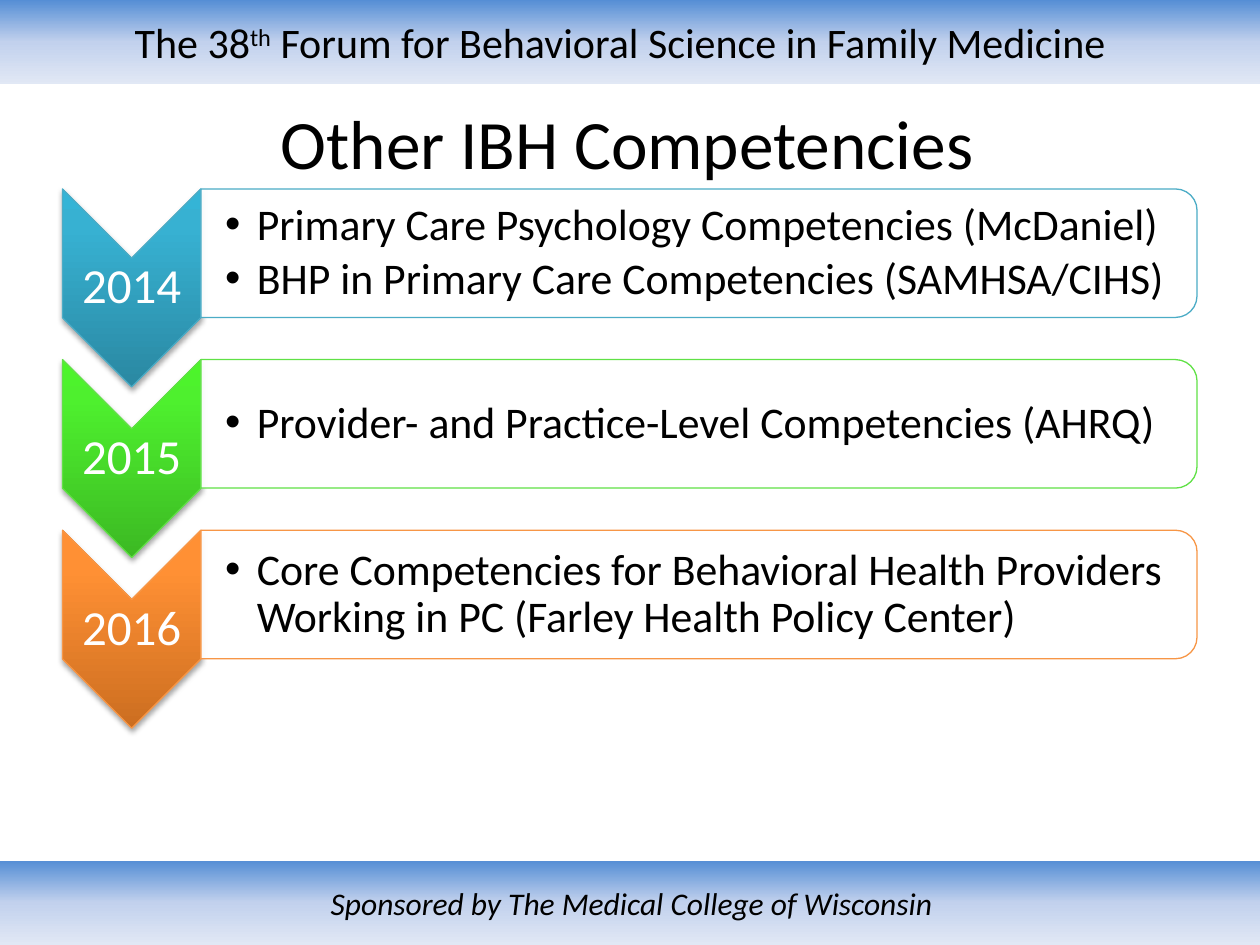
from lxml import etree
from pptx import Presentation
from pptx.dml.color import RGBColor
from pptx.enum.shapes import MSO_SHAPE as Shape
from pptx.enum.text import MSO_ANCHOR as Anchor, PP_ALIGN as Align
from pptx.oxml.ns import qn
from pptx.util import Cm, Pt

rgb = RGBColor.from_string


def shade(shape, stops, angle):
    """Fill with (percent, hex) stops; the clockwise angle ignores shape rotation."""
    shape.fill.gradient()
    grad = shape._element.spPr.find(qn("a:gradFill"))
    grad.set("rotWithShape", "0")
    grad.find(qn("a:lin")).set("ang", str(angle * 60000))
    stop_list = grad.find(qn("a:gsLst"))
    stop_list.clear()
    for percent, color in stops:
        stop = etree.SubElement(stop_list, qn("a:gs"), pos=str(percent * 1000))
        etree.SubElement(stop, qn("a:srgbClr"), val=color)


def style(paragraph, size, color="000000", align=Align.CENTER):
    paragraph.alignment = align
    for run in paragraph.runs:
        run.font.name = "Calibri"
        run.font.size = Pt(size)
        run.font.color.rgb = rgb(color)


prs = Presentation()
prs.slide_width, prs.slide_height = Cm(25.4), Cm(19.05)
slide = prs.slides.add_slide(prs.slide_layouts[6])
shapes = slide.shapes

# Header and footer bands
band_stops = [(0, "558ED5"), (50, "C2D1ED"), (100, "E1E8F5")]
bands = [
    (0, 25.4, ["The 38", "th", " Forum for Behavioral Science in Family Medicine"]),
    (17.35, 25.47, ["Sponsored by The Medical College of Wisconsin"]),
]
band_lines = []
for top, width, parts in bands:
    band = shapes.add_shape(Shape.RECTANGLE, 0, Cm(top), Cm(width), Cm(1.7))
    band.shadow.inherit = False
    band.line.fill.background()
    shade(band, band_stops, 90)
    band.text_frame.vertical_anchor = Anchor.MIDDLE
    line = band.text_frame.paragraphs[0]
    for part in parts:
        line.add_run().text = part
    band_lines.append(line)

forum, sponsor = band_lines
style(forum, 24)
forum.runs[1].font._element.set("baseline", "30000")
shapes[0].text_frame.margin_right = Cm(0.64)
style(sponsor, 18)
sponsor.runs[0].font.italic = True

title = shapes.add_textbox(Cm(1.22), Cm(1.9), Cm(22.86), Cm(1.9)).text_frame
title.word_wrap = True
title.vertical_anchor = Anchor.MIDDLE
title.text = "Other IBH Competencies"
style(title.paragraphs[0], 39.6)

# Timeline: one chevron and one panel per year
first_top, pitch = 3.81, 3.44
left, right = 1.26, 24.13
chevron_width, chevron_height = 2.79, 3.99
panel_left, panel_height = left + chevron_width, 2.59
panel_width = right - panel_left
inset = Cm(0.05)

years = [
    ("2014", "4BACC6", ["2A88A2", "37B1D2", "34B4D6"],
     ["Primary Care Psychology Competencies (McDaniel)",
      "BHP in Primary Care Competencies (SAMHSA/CIHS)"]),
    ("2015", "60E146", ["3CB923", "4EF02E", "4CF52A"],
     ["Provider- and Practice-Level Competencies (AHRQ)"]),
    ("2016", "F79646", ["CC6E20", "FF9034", "FF9136"],
     ["Core Competencies for Behavioral Health Providers Working in PC "
      "(Farley Health Policy Center)"]),
]

for row, (year, outline, tones, competencies) in enumerate(years):
    top = first_top + row * pitch

    # Both outlines are turned a quarter, so their frames swap width and height
    turned = []
    for kind, x, width, height in [
        (Shape.CHEVRON, left, chevron_width, chevron_height),
        (Shape.ROUND_2_SAME_RECTANGLE, panel_left, panel_width, panel_height),
    ]:
        shift = (width - height) / 2
        shape = shapes.add_shape(kind, Cm(x + shift), Cm(top - shift), Cm(height), Cm(width))
        shape.rotation = 90
        shape.shadow.inherit = False
        shape.line.color.rgb = rgb(outline)
        shape.line.width = Pt(0.75)
        turned.append(shape)
    chevron, panel = turned

    shade(chevron, zip((0, 80, 100), tones), 270)
    effects = chevron._element.spPr.find(qn("a:effectLst"))
    shadow = etree.SubElement(effects, qn("a:outerShdw"), blurRad="40000",
                              dist="23000", dir="5400000", rotWithShape="0")
    shadow_color = etree.SubElement(shadow, qn("a:srgbClr"), val="000000")
    etree.SubElement(shadow_color, qn("a:alpha"), val="35000")

    panel.fill.solid()
    panel.fill.fore_color.rgb = rgb("FFFFFF")
    panel_color = panel._element.spPr.find(qn("a:solidFill"))[0]
    etree.SubElement(panel_color, qn("a:alpha"), val="90000")

    label = shapes.add_textbox(Cm(left), Cm(top + 1.4), Cm(chevron_width), Cm(1.19)).text_frame
    details = shapes.add_textbox(Cm(panel_left), Cm(top + 0.13),
                                 Cm(panel_width - 0.13), Cm(2.34)).text_frame
    for frame in (label, details):
        frame.word_wrap = True
        frame.vertical_anchor = Anchor.MIDDLE
        frame.margin_left = frame.margin_right = inset
        frame.margin_top = frame.margin_bottom = inset
    details.margin_left = Cm(0.49)

    label.text = year
    label.paragraphs[0].line_spacing = 0.9
    style(label.paragraphs[0], 28, "FFFFFF")

    details.text = "\n".join(competencies)
    for item in details.paragraphs:
        props = item._p.get_or_add_pPr()
        props.set("marL", str(Cm(0.64)))
        props.set("indent", str(-Cm(0.64)))
        etree.SubElement(props, qn("a:buFont"), typeface="Arial")
        etree.SubElement(props, qn("a:buChar"), char="•")
        item.line_spacing = 0.9
        item.space_after = Pt(3.75)
        style(item, 25, align=Align.LEFT)

prs.save("out.pptx")
